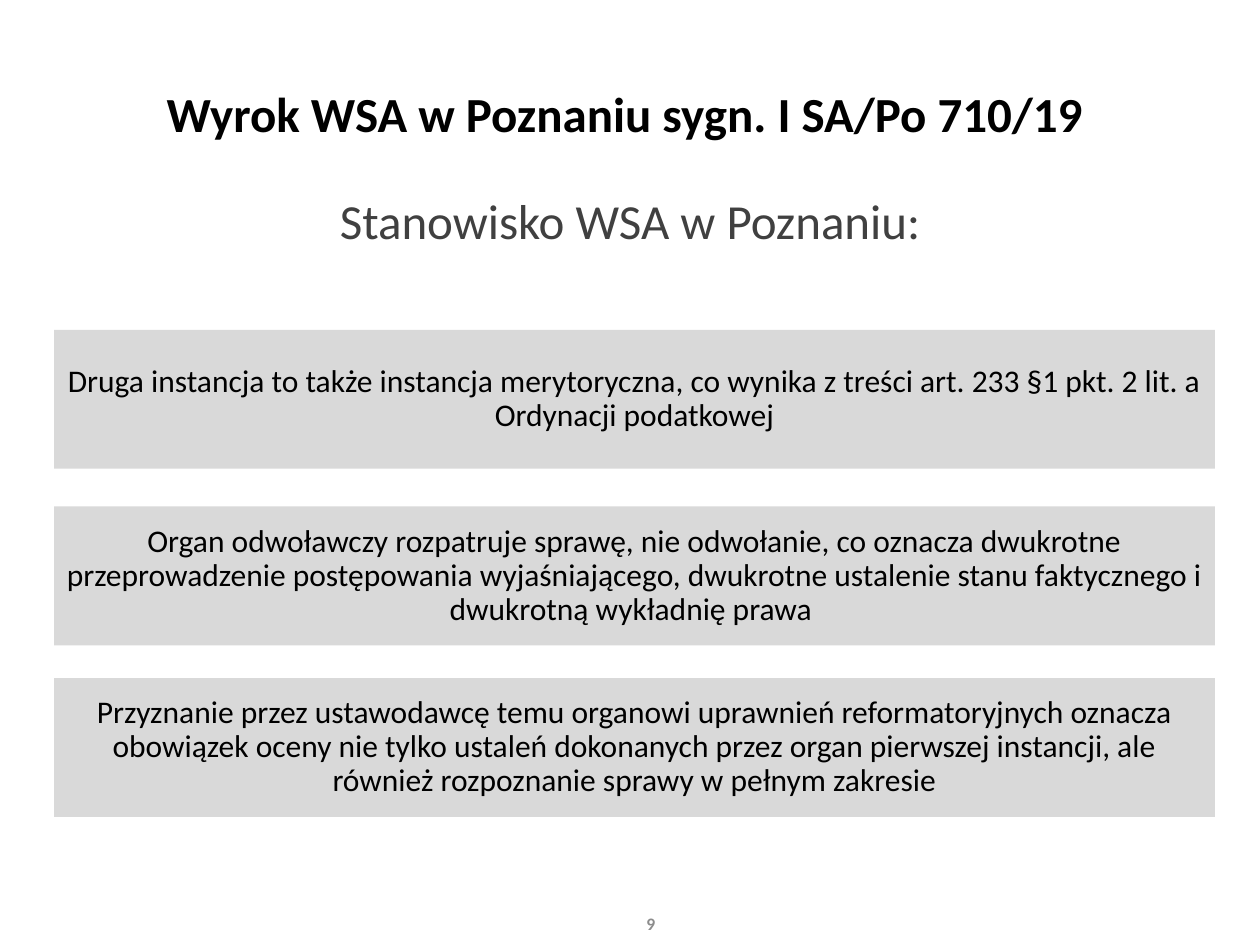
from pptx import Presentation
from pptx.dml.color import RGBColor
from pptx.enum.shapes import MSO_SHAPE
from pptx.enum.text import MSO_ANCHOR, PP_ALIGN
from pptx.util import Cm, Pt

RECTANGLE = MSO_SHAPE.RECTANGLE
MIDDLE = MSO_ANCHOR.MIDDLE
CENTER, RIGHT = PP_ALIGN.CENTER, PP_ALIGN.RIGHT

FONT = "Calibri"
TITLE_LAYOUT = 5
COLORS = {
    "text": "000000",
    "subtitle": "404040",
    "number": "8C8C8C",
    "panel": "D9D9D9",
}

SLIDE_WIDTH, SLIDE_HEIGHT = Cm(25.4), Cm(19.05)
PANEL_TOPS = [Cm(6.65), Cm(10.21), Cm(13.67)]
ARGUMENTS = [
    "Druga instancja to także instancja merytoryczna, co wynika z treści "
    "art. 233 §1 pkt. 2 lit. a Ordynacji podatkowej",
    "Organ odwoławczy rozpatruje sprawę, nie odwołanie, co oznacza dwukrotne "
    "przeprowadzenie postępowania wyjaśniającego, dwukrotne ustalenie stanu "
    "faktycznego i dwukrotną wykładnię prawa ",
    "Przyznanie przez ustawodawcę temu organowi uprawnień reformatoryjnych "
    "oznacza obowiązek oceny nie tylko ustaleń dokonanych przez organ "
    "pierwszej instancji, ale również rozpoznanie sprawy w pełnym zakresie",
]


def set_text(shape, text, size, color, bold=False, align=CENTER, spacing=0.9):
    """Fill a shape with one vertically centred paragraph."""
    frame = shape.text_frame
    frame.text = text
    frame.word_wrap = True
    frame.vertical_anchor = MIDDLE
    paragraph = frame.paragraphs[0]
    paragraph.alignment = align
    paragraph.line_spacing = spacing
    font = paragraph.runs[0].font
    font.name = FONT
    font.size = Pt(size)
    font.bold = bold
    font.color.rgb = RGBColor.from_string(COLORS[color])


def place_title(slide, left, top, width, height):
    title = slide.shapes.title
    title.left, title.top, title.width, title.height = left, top, width, height
    set_text(title, "Wyrok WSA w Poznaniu sygn. I SA/Po 710/19 ", 28, "text", bold=True)
    title.text_frame.margin_top = 0
    title.text_frame.margin_bottom = Cm(0.13)


def add_subtitle(slide, left, top, width, height):
    subtitle = slide.shapes.add_textbox(left, top, width, height)
    set_text(subtitle, "Stanowisko WSA w Poznaniu:", 28, "subtitle")


def add_argument_panel(slide, text, left, top, width, height):
    panel = slide.shapes.add_shape(RECTANGLE, left, top, width, height)
    panel.shadow.inherit = False
    panel.fill.solid()
    panel.fill.fore_color.rgb = RGBColor.from_string(COLORS["panel"])
    panel.line.fill.background()
    set_text(panel, text, 18, "text")


def add_slide_number(slide, left, top, width, height):
    number = slide.shapes.add_textbox(left, top, width, height)
    set_text(number, "9", 10, "number", bold=True, align=RIGHT, spacing=1.0)


def main():
    presentation = Presentation()
    presentation.slide_width = SLIDE_WIDTH
    presentation.slide_height = SLIDE_HEIGHT
    slide = presentation.slides.add_slide(presentation.slide_layouts[TITLE_LAYOUT])

    place_title(slide, 0, Cm(1.55), SLIDE_WIDTH, Cm(1.73))
    add_slide_number(slide, Cm(11.94), Cm(18.11), Cm(1.52), Cm(1.02))
    add_subtitle(slide, 0, Cm(2.64), SLIDE_WIDTH, Cm(3.73))
    for top, argument in zip(PANEL_TOPS, ARGUMENTS):
        add_argument_panel(slide, argument, Cm(1.09), top, Cm(23.4), Cm(2.8))

    presentation.save("out.pptx")


if __name__ == "__main__":
    main()
